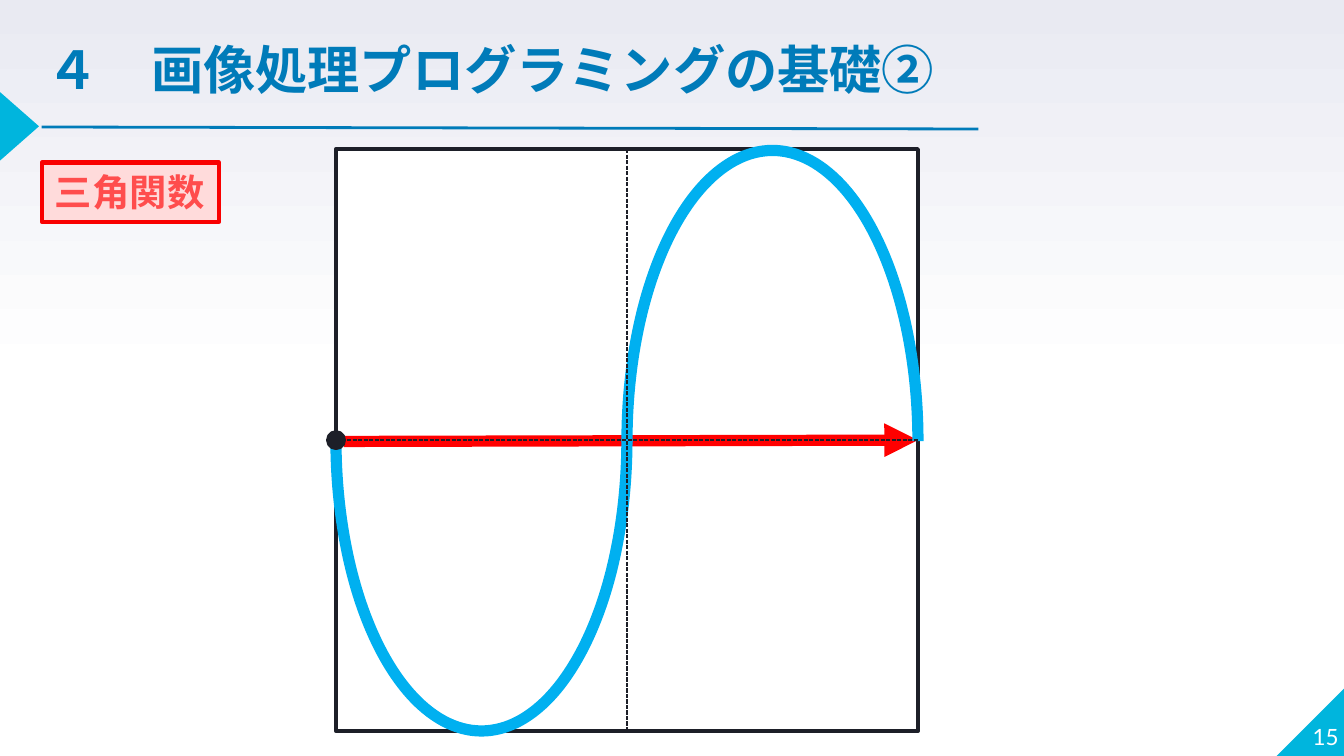
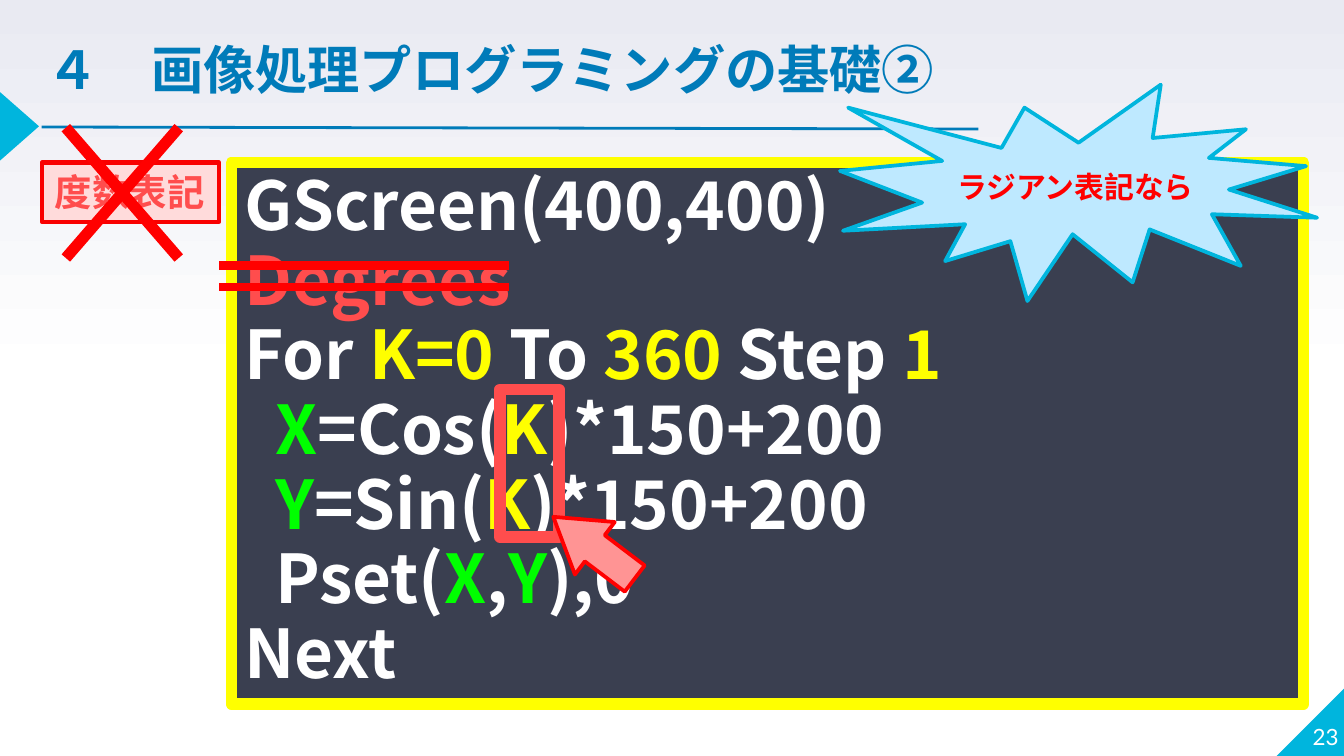
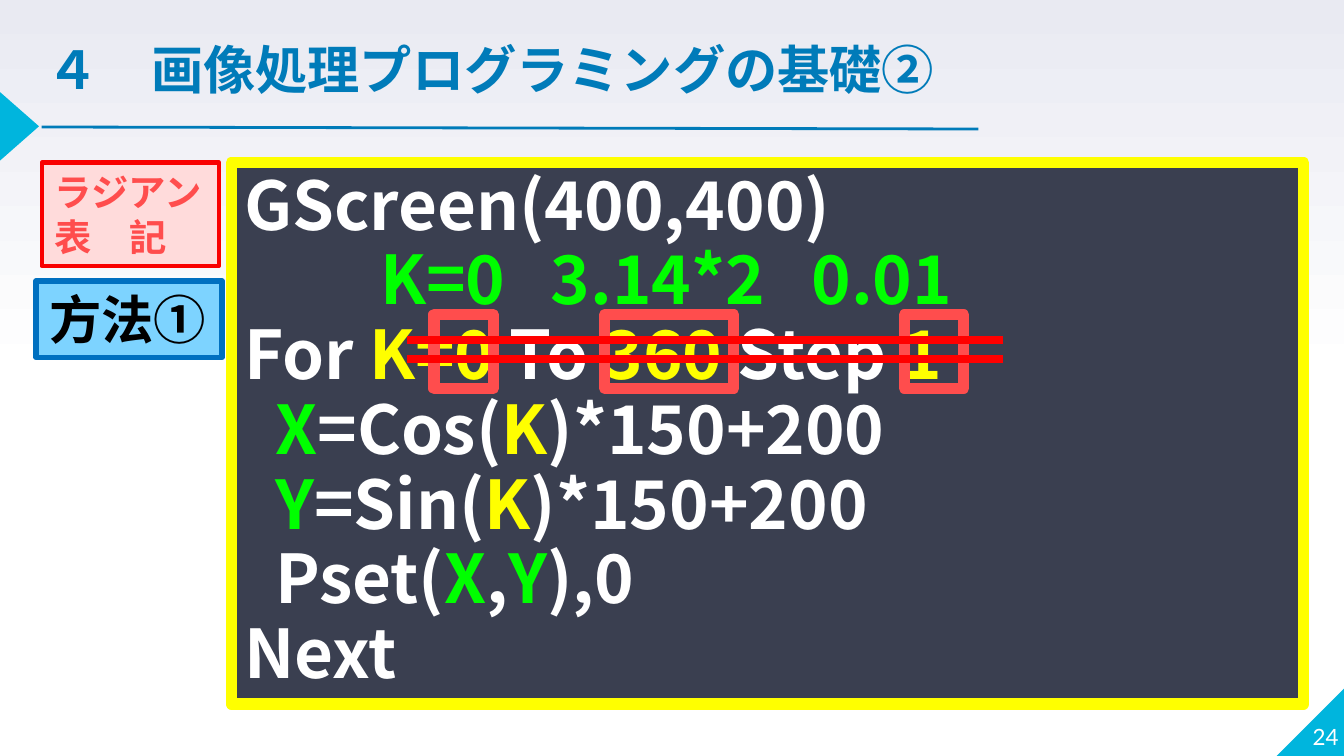
from collections import namedtuple
from lxml.etree import SubElement
from pptx import Presentation
from pptx.dml.color import RGBColor
from pptx.enum.dml import MSO_LINE
from pptx.enum.shapes import MSO_CONNECTOR, MSO_SHAPE
from pptx.enum.text import MSO_ANCHOR, PP_ALIGN
from pptx.oxml.ns import qn
from pptx.util import Inches, Pt

# 16:9 slide on a grid of 100 columns, all cells square
WIDE = Inches(10)
HIGH = WIDE * 9 // 16
CELL = WIDE / 100
PITCH = 40 / 7.2  # one 40 pt code line, in rows

Box = namedtuple("Box", "x y w h")
TAG = Box(3.1, 12.1, 13.2, 4.4)
PANEL = Box(17.2, 12.1, 79.8, 40.3)

# Shared colours and font
BLUE, CYAN, INK, RED = "007BB9", "00B5DD", "1D1F28", "FF0000"
CORAL, WHITE, GREEN, YELLOW = "FF4D4D", "FFFFFF", "00FF00", "FFFF00"
FONT = "Noto Sans CJK JP"
TITLE = "４　画像処理プログラミングの基礎②"

# Code lines: indent in columns, then text and colour pairs
FIRST = (0, [("GScreen(400,400)", WHITE)])
UNIT = (0, [("Degrees", CORAL)])
LOOP = [
    (0, [("For ", WHITE), ("K=0", YELLOW), (" To ", WHITE), ("360", YELLOW),
         (" Step ", WHITE), ("1", YELLOW)]),
    *[(2.3, [(var, GREEN), (f"={func}(", WHITE), ("K", YELLOW), (")*150+200", WHITE)])
      for var, func in (("X", "Cos"), ("Y", "Sin"))],
    (2.3, [("Pset(", WHITE), ("X", GREEN), (",", WHITE), ("Y", GREEN), ("),0", WHITE)]),
    (0, [("Next", WHITE)]),
]


def rgb(code):
    return RGBColor.from_string(code)


def cells(*nums):
    return [round(num * CELL) for num in nums]


def within(box, x, y, w, h):
    """Box at an offset in cells from another box."""
    return Box(box.x + x, box.y + y, w, h)


def style(run, size, color, bold=True, font=FONT):
    run.font.size, run.font.bold, run.font.name = Pt(size), bold, font
    run.font.color.rgb = rgb(color)
    SubElement(run.font._element, qn("a:ea")).set("typeface", FONT)


def write(shape, text, size, color, align=PP_ALIGN.LEFT, anchor=MSO_ANCHOR.TOP,
          wrap=True, **look):
    frame = shape.text_frame
    frame.text = text
    frame.word_wrap, frame.vertical_anchor = wrap, anchor
    for para in frame.paragraphs:
        para.alignment = align
        for run in para.runs:
            style(run, size, color, **look)
    return frame


def label(slide, box, text, size, color, **look):
    return write(slide.shapes.add_textbox(*cells(*box)), text, size, color, **look)


def draw(slide, kind, box, fill=None, edge=None, width=1, turn=0, adjust=()):
    shape = slide.shapes.add_shape(kind, *cells(*box))
    shape.shadow.inherit = False
    shape.rotation = turn
    for index, value in enumerate(adjust):
        shape.adjustments[index] = value
    if fill:
        shape.fill.solid()
        shape.fill.fore_color.rgb = rgb(fill)
    else:
        shape.fill.background()
    if edge:
        shape.line.color.rgb = rgb(edge)
        shape.line.width = Pt(width)
    else:
        shape.line.fill.background()
    return shape


def rule(slide, ends, color, width, dash=None, arrow=False):
    line = slide.shapes.add_connector(MSO_CONNECTOR.STRAIGHT, *cells(*ends))
    line.line.color.rgb = rgb(color)
    line.line.width = Pt(width)
    if dash:
        line.line.dash_style = dash
    if arrow:
        SubElement(line.line._get_or_add_ln(), qn("a:tailEnd")).set("type", "triangle")
    SubElement(line._element.spPr, qn("a:effectLst"))
    return line


def base(deck, page):
    """Slide with corner, marker, title, rule and page number."""
    slide = deck.slides.add_slide(deck.slide_layouts[6])
    corner = draw(slide, MSO_SHAPE.RIGHT_TRIANGLE, Box(95, 51.15, 5.1, 5.1), CYAN)
    corner._element.spPr.find(qn("a:xfrm")).set("flipH", "1")
    draw(slide, MSO_SHAPE.ISOSCELES_TRIANGLE, Box(-1.1, 7.95, 5.1, 2.9), CYAN, turn=90)
    frame = label(slide, Box(94.6, 50.7, 5, 5.1), str(page), 12, WHITE, bold=False,
                  font="Lato", align=PP_ALIGN.RIGHT, anchor=MSO_ANCHOR.BOTTOM)
    frame.margin_left = frame.margin_right = frame.margin_top = frame.margin_bottom = 0
    label(slide, Box(2.5, 2.3, 73.9, 5.7), TITLE, 28, BLUE)
    rule(slide, (3.1, 9.45, 72.8, 9.6), BLUE, 1.5)
    return slide


def tag(slide, box, text, size=20, color=CORAL, fill="FFDBDB", edge="F90000", width=2.25):
    shape = draw(slide, MSO_SHAPE.RECTANGLE, box, fill, edge, width)
    write(shape, text, size, color, wrap=False)


def wave(slide, box):
    """Framed sine wave with axes and a starting dot."""
    frame = draw(slide, MSO_SHAPE.RECTANGLE, box, WHITE, INK, 2.25)
    half, mid = box.w / 2, box.y + box.h / 2
    arrow = rule(slide, (box.x + 0.6, mid + 0.1, box.x + box.w, mid), RED, 6, arrow=True)
    arrow.end_connect(frame, 3)
    for index, sweep in enumerate([(0.22, 108.32), (107.9, 215.94)]):
        draw(slide, MSO_SHAPE.ARC, within(box, index * half, index * 0.1, half, box.h),
             edge="00B0F0", width=6, adjust=sweep)
    # Dashed axes
    for start, end in ((0, 2), (1, 3)):
        axis = rule(slide, (box.x, mid, box.x + box.w, mid), INK, 0.75, MSO_LINE.SQUARE_DOT)
        axis.line._get_or_add_ln().find(qn("a:prstDash")).set("val", "sysDash")
        axis.begin_connect(frame, start)
        axis.end_connect(frame, end)
    draw(slide, MSO_SHAPE.OVAL, Box(box.x - 0.6, mid - 0.6, 1.2, 1.2), INK, INK, 2)


def panel(slide, box, code, skip=None):
    """Code panel; the line numbered skip leaves one row free above it."""
    shape = draw(slide, MSO_SHAPE.RECTANGLE, box, "3A3F50", YELLOW, 6)
    frame = shape.text_frame
    frame.word_wrap, frame.vertical_anchor = True, MSO_ANCHOR.TOP
    for index, (indent, parts) in enumerate(code):
        para = frame.add_paragraph() if index else frame.paragraphs[0]
        para.alignment, para.line_spacing = PP_ALIGN.LEFT, Pt(40)
        para._p.get_or_add_pPr().set("marL", str(*cells(indent)))
        if index == skip:
            para.space_before = Pt(40)
        for text, color in parts:
            run = para.add_run()
            run.text = text
            style(run, 36, color)


def ring(slide, box, row, x, w, rows=1):
    """Outline around part of a code row."""
    draw(slide, MSO_SHAPE.RECTANGLE, within(box, x, row * PITCH + 0.2, w, rows * 5.5),
         edge=CORAL, width=6)


def strike(slide, box, row, x, w, gap):
    """Double line through a code row."""
    for step in range(2):
        y = box.y + row * PITCH + 2.1 + step * gap
        rule(slide, (box.x + x, y, box.x + x + w, y), RED, 4.5)


def cross(slide, box):
    """Red X over a tag."""
    left, right = box.x + 1.8, box.x + 10.2
    top, low = box.y - 2.6, box.y + 7.1
    rule(slide, (right, top, left, low), RED, 6)
    rule(slide, (left, top, right, low), RED, 6)


def hint(slide, box):
    """Replacement values above the struck loop line."""
    frame = label(slide, box, "K=0\t3.14*2\t0.01", 36, GREEN)
    tabs = SubElement(frame.paragraphs[0]._p.get_or_add_pPr(), qn("a:tabLst"))
    for stop in cells(12.7, 32.1):
        tab = SubElement(tabs, qn("a:tab"))
        tab.set("pos", str(stop))
        tab.set("algn", "l")


def graph(deck):
    slide = base(deck, 15)
    wave(slide, Box(25, 11.1, 43.3, 43.3))
    tag(slide, TAG, "三角関数")


def degrees(deck):
    slide = base(deck, 23)
    tag(slide, TAG, "度数表記")
    panel(slide, PANEL, [FIRST, UNIT, *LOOP])
    cross(slide, TAG)
    strike(slide, PANEL, 1, -0.9, 21.6, 1.6)
    ring(slide, PANEL, 3, 20, 4.4, rows=2)
    # Burst and pointer
    burst = draw(slide, MSO_SHAPE.EXPLOSION1, within(PANEL, 45.3, -5.8, 35.5, 16.1),
                 "BEE9FF", CYAN, 2)
    write(burst, "ラジアン表記なら", 16, RED, PP_ALIGN.CENTER, MSO_ANCHOR.MIDDLE,
          wrap=False, font="Arial")
    draw(slide, MSO_SHAPE.RIGHT_ARROW, within(PANEL, 23.2, 26.2, 7.6, 4.9), "FF9494", RED, 2,
         turn=217.2, adjust=(0.5, 0.79))


def radians(deck):
    slide = base(deck, 24)
    tag(slide, TAG._replace(h=7.7), "ラジアン\n表　記")
    panel(slide, PANEL, [FIRST, *LOOP], skip=1)
    for x, w in ((15.1, 4.4), (27.8, 9.6), (50.1, 4.4)):
        ring(slide, PANEL, 2, x, w)
    strike(slide, PANEL, 2, 13.1, 44.3, 1.4)
    hint(slide, within(PANEL, 10.1, 5.1, 50, 7.1))
    tag(slide, within(TAG, -0.4, 8.8, 13.8, 5.7), "方法①", 28, "000000", "7DD3FF", "0070C0", 3)


def main():
    deck = Presentation()
    deck.slide_width, deck.slide_height = WIDE, HIGH
    # Backdrop fading upwards from the middle
    back = deck.slide_master.background.fill
    back.gradient()
    back.gradient_angle = 90
    for stop, place, color in zip(back.gradient_stops, (0.5, 1), (WHITE, "E9EAF2")):
        stop.position, stop.color.rgb = place, rgb(color)
    for build in (graph, degrees, radians):
        build(deck)
    deck.save("out.pptx")


if __name__ == "__main__":
    main()
